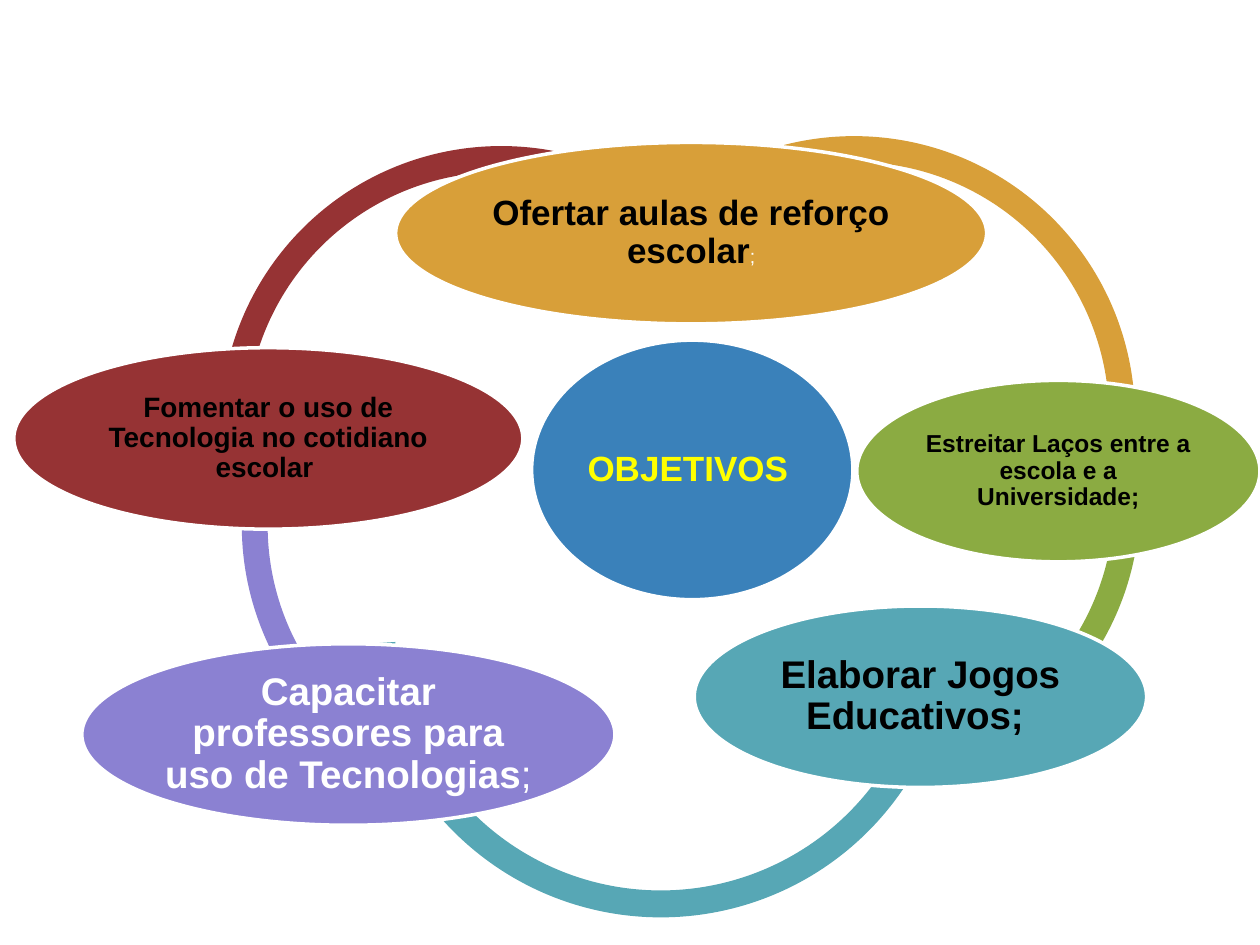
from pptx import Presentation
from pptx.dml.color import RGBColor
from pptx.enum.shapes import MSO_SHAPE
from pptx.enum.text import MSO_ANCHOR, PP_ALIGN
from pptx.util import Pt

BLOCK_ARC = MSO_SHAPE.BLOCK_ARC
OVAL = MSO_SHAPE.OVAL
MIDDLE = MSO_ANCHOR.MIDDLE
CENTER = PP_ALIGN.CENTER

WHITE = RGBColor(0xFF, 0xFF, 0xFF)
BLACK = RGBColor(0x00, 0x00, 0x00)
YELLOW = RGBColor(0xFF, 0xFF, 0x00)
BLUE = RGBColor(0x3A, 0x81, 0xBA)
RED = RGBColor(0x96, 0x33, 0x34)
PURPLE = RGBColor(0x8B, 0x81, 0xD2)
TEAL = RGBColor(0x57, 0xA7, 0xB5)
GREEN = RGBColor(0x8B, 0xAB, 0x42)
ORANGE = RGBColor(0xD8, 0x9F, 0x39)

FONT = "Arial"
ADJUSTMENT_PER_DEGREE = 0.6
BAND = 0.046
GOAL_HEIGHT = 103.7

ARCS = [
    (126, 11.5, 321, 185.14, 302.9, RED),
    (138.2, 67.7, 321, 130.71, 198.62, PURPLE),
    (210.2, 117.4, 334.8, 356.22, 176.22, TEAL),
    (330.5, 54, 321, 2.64, 60.22, GREEN),
    (327.6, 5.8, 321, 250.03, 355.87, ORANGE),
]

GOALS = [
    (226.1, 9.4, 337.7, ORANGE, "Ofertar aulas de reforço escolar", 20, BLACK, (";", 11)),
    (489.6, 145.4, 230.4, GREEN,
     "Estreitar Laços entre a escola e a Universidade;", 14, BLACK, None),
    (396.7, 274.3, 258.5, TEAL, "Elaborar Jogos Educativos; ", 22, BLACK, None),
    (46.8, 295.9, 304.6, PURPLE,
     "Capacitar professores para uso de Tecnologias", 22, WHITE, (";", 22)),
    (7.9, 126.7, 290.9, RED,
     "Fomentar o uso de Tecnologia no cotidiano escolar ", 16, BLACK, None),
]


def add_run(paragraph, text, size, color, bold=False):
    run = paragraph.add_run()
    run.text = text
    run.font.name = FONT
    run.font.size = Pt(size)
    run.font.bold = bold
    run.font.color.rgb = color


def add_arc(shapes, left, top, size, start, end, color):
    arc = shapes.add_shape(BLOCK_ARC, Pt(left), Pt(top), Pt(size), Pt(size))
    arc.shadow.inherit = False
    arc.adjustments[0] = start * ADJUSTMENT_PER_DEGREE
    arc.adjustments[1] = end * ADJUSTMENT_PER_DEGREE
    arc.adjustments[2] = BAND
    arc.fill.solid()
    arc.fill.fore_color.rgb = color
    arc.line.fill.background()


def add_ellipse(shapes, left, top, width, height, fill):
    ellipse = shapes.add_shape(OVAL, Pt(left), Pt(top), Pt(width), Pt(height))
    ellipse.shadow.inherit = False
    ellipse.fill.solid()
    ellipse.fill.fore_color.rgb = fill
    ellipse.line.color.rgb = WHITE
    ellipse.line.width = Pt(2)
    frame = ellipse.text_frame
    frame.word_wrap = True
    frame.vertical_anchor = MIDDLE
    frame.margin_left = frame.margin_right = Pt(2)
    frame.margin_top = frame.margin_bottom = Pt(2)
    paragraph = frame.paragraphs[0]
    paragraph.alignment = CENTER
    paragraph.line_spacing = 0.9
    return paragraph


def add_cycle(slide, left, top):
    shapes = slide.shapes.add_group_shape().shapes
    for x, y, size, start, end, color in ARCS:
        add_arc(shapes, left + x, top + y, size, start, end, color)

    hub = add_ellipse(shapes, left + 303.8, top + 122.4, 183.6, 148.3, BLUE)
    add_run(hub, "OBJETIVOS", 20, YELLOW, bold=True)
    add_run(hub, " ", 18, WHITE)

    for x, y, width, fill, text, size, color, ending in GOALS:
        goal = add_ellipse(shapes, left + x, top + y, width, GOAL_HEIGHT, fill)
        add_run(goal, text, size, color, bold=True)
        if ending:
            add_run(goal, *ending, WHITE)


def main():
    presentation = Presentation()
    presentation.slide_width = Pt(720)
    presentation.slide_height = Pt(540)
    slide = presentation.slides.add_slide(presentation.slide_layouts[6])
    add_cycle(slide, left=0, top=72)
    presentation.save("out.pptx")


if __name__ == "__main__":
    main()
